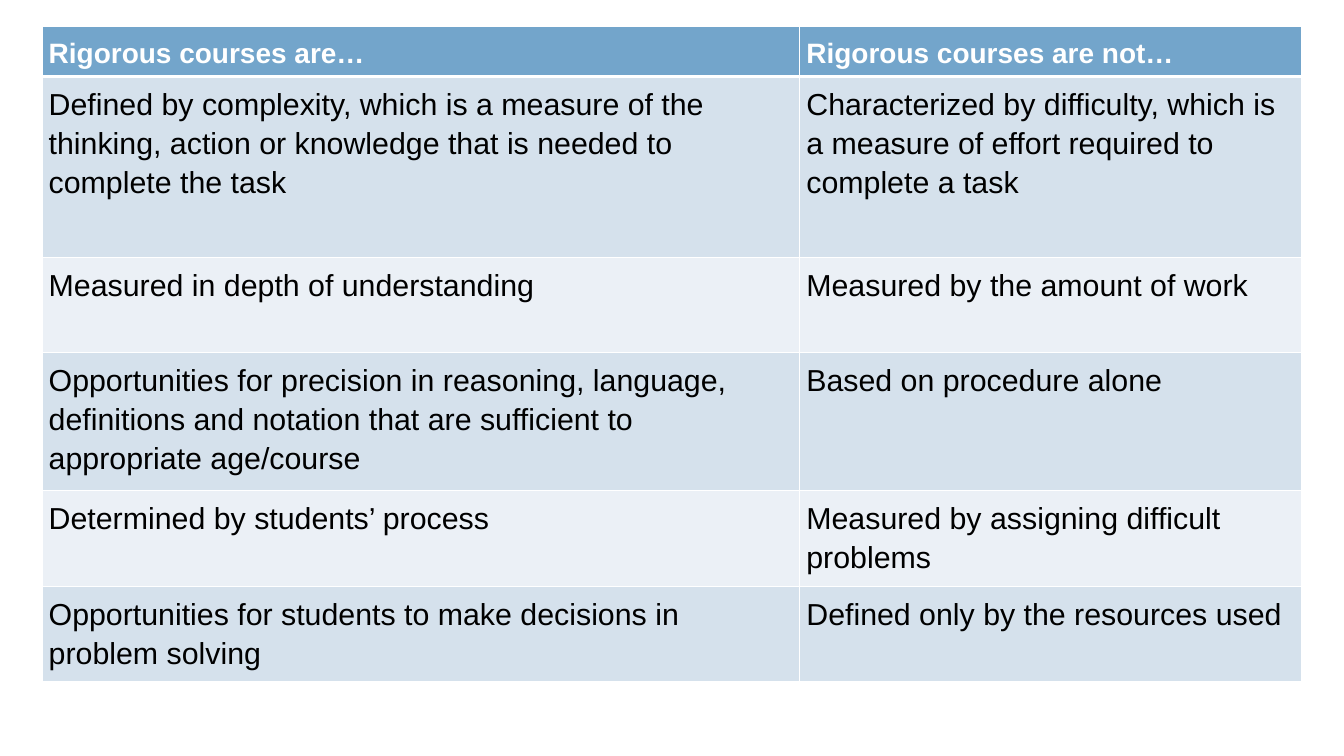
from lxml.etree import SubElement
from pptx import Presentation
from pptx.dml.color import RGBColor
from pptx.oxml.ns import qn
from pptx.util import Inches, Pt

WHITE = RGBColor(0xFF, 0xFF, 0xFF)
BLACK = RGBColor(0x00, 0x00, 0x00)
HEADER_BLUE = RGBColor(0x73, 0xA5, 0xCB)
BAND_DARK = RGBColor(0xD5, 0xE1, 0xEC)
BAND_LIGHT = RGBColor(0xEB, 0xF0, 0xF6)

SLIDE_WIDTH, SLIDE_HEIGHT = Inches(16), Inches(9)
TABLE_LEFT, TABLE_TOP = Inches(0.5), Inches(0.32)
COLUMN_WIDTHS = [Inches(width) for width in (9.02, 5.98)]
ROW_HEIGHTS = [Inches(height) for height in (0.59, 2.15, 1.14, 1.64, 1.14, 1.14)]
CELL_MARGIN = Inches(0.08)

COMPARISON = [
    ("Rigorous courses are…", "Rigorous courses are not…"),
    ("Defined by complexity, which is a measure of the thinking, action or "
     "knowledge that is needed to complete the task",
     "Characterized by difficulty, which is a measure of effort required to "
     "complete a task"),
    ("Measured in depth of understanding", "Measured by the amount of work"),
    ("Opportunities for precision in reasoning, language, definitions and "
     "notation that are sufficient to appropriate age/course",
     "Based on procedure alone"),
    ("Determined by students’ process",
     "Measured by assigning difficult problems"),
    ("Opportunities for students to make decisions in problem solving",
     "Defined only by the resources used"),
]


def write_text(frame, text, size=26, color=BLACK, bold=False):
    para = frame.paragraphs[0]
    para.line_spacing = 1.15
    span = para.add_run()
    span.text = text
    span.font.name = "Arial"
    span.font.size = Pt(size)
    span.font.bold = bold
    span.font.color.rgb = color


def set_borders(cell, top=1, bottom=1):
    """Draw white cell borders; widths are in points."""
    properties = cell._tc.get_or_add_tcPr()
    for side, width in (("L", 1), ("R", 1), ("T", top), ("B", bottom)):
        line = SubElement(properties, qn(f"a:ln{side}"), w=str(Pt(width)))
        fill = SubElement(line, qn("a:solidFill"))
        SubElement(fill, qn("a:srgbClr"), val=str(WHITE))


def format_cell(cell, fill, **borders):
    cell.margin_left = cell.margin_right = CELL_MARGIN
    cell.margin_top = cell.margin_bottom = CELL_MARGIN
    set_borders(cell, **borders)
    cell.fill.solid()
    cell.fill.fore_color.rgb = fill


def fill_row(cells, row_number, texts):
    for cell, text in zip(cells, texts):
        if row_number == 0:
            format_cell(cell, HEADER_BLUE, bottom=3)
            write_text(cell.text_frame, text, size=24, color=WHITE, bold=True)
        else:
            band = BAND_DARK if row_number % 2 else BAND_LIGHT
            format_cell(cell, band, top=3 if row_number == 1 else 1)
            write_text(cell.text_frame, text)


def add_comparison_table(page):
    table = page.shapes.add_table(
        len(ROW_HEIGHTS), len(COLUMN_WIDTHS), TABLE_LEFT, TABLE_TOP,
        sum(COLUMN_WIDTHS), sum(ROW_HEIGHTS)).table
    for column, width in zip(table.columns, COLUMN_WIDTHS):
        column.width = width
    for number, (row, height) in enumerate(zip(table.rows, ROW_HEIGHTS)):
        row.height = height
        fill_row(row.cells, number, COMPARISON[number])


def main():
    deck = Presentation()
    deck.slide_width, deck.slide_height = SLIDE_WIDTH, SLIDE_HEIGHT
    page = deck.slides.add_slide(deck.slide_layouts[6])
    add_comparison_table(page)
    deck.save("out.pptx")


if __name__ == "__main__":
    main()
